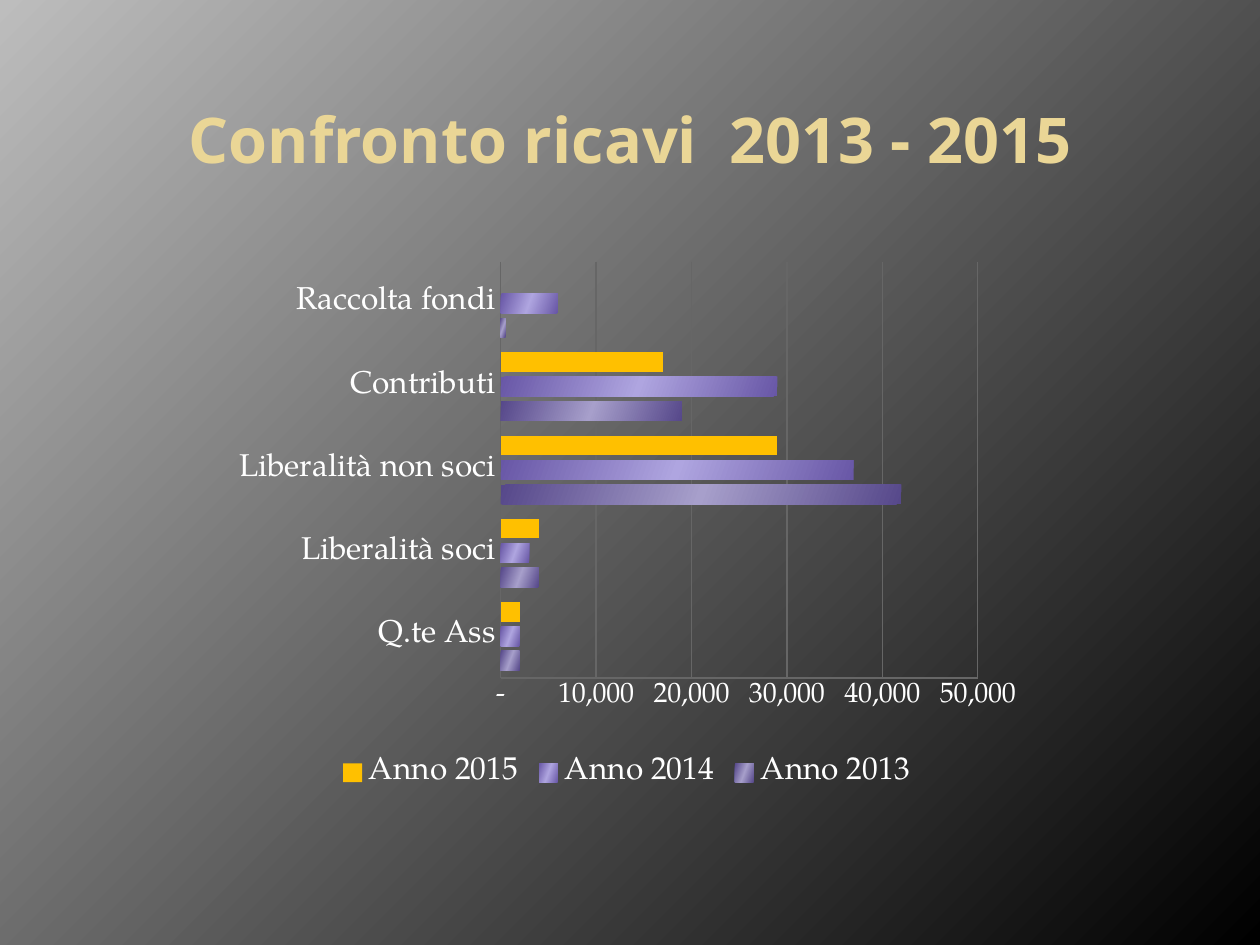
import copy
import pptx
import pptx.chart.data
import pptx.dml.color
import pptx.enum.chart
import pptx.enum.text
import pptx.oxml
import pptx.oxml.ns
import pptx.util

Pt = pptx.util.Pt
qn = pptx.oxml.ns.qn


def tint(code):
    return pptx.dml.color.RGBColor.from_string(code)


def style(font, face, size, color, bold=False):
    font.name, font.size, font.bold = face, Pt(size), bold
    font.color.rgb = tint(color)


def write(frame, text, face, size, color, bold=False):
    frame.word_wrap = True
    frame.vertical_anchor = pptx.enum.text.MSO_ANCHOR.MIDDLE
    para = frame.paragraphs[0]
    para.alignment = pptx.enum.text.PP_ALIGN.CENTER
    run = para.add_run()
    run.text = text
    style(run.font, face, size, color, bold)


def fade(fill, root, codes, angle):
    fill.gradient()
    fill.gradient_angle = angle
    stops = root.find(".//" + qn("a:gsLst"))
    for _ in codes[2:]:
        stops.append(copy.deepcopy(stops[-1]))
    for i, (stop, code) in enumerate(zip(fill.gradient_stops, codes)):
        stop.color.rgb = tint(code)
        stop.position = i / (len(codes) - 1)


class Deck:
    """Hold the style and the current slide."""

    head, body = "Noto Sans", "TeX Gyre Pagella"
    gold, white, gray = "EAD696", "FFFFFF", "666666"

    def __init__(self):
        self.prs = pptx.Presentation()
        self.prs.slide_width, self.prs.slide_height = Pt(720), Pt(540)
        self.slide = self.prs.slides.add_slide(self.prs.slide_layouts[6])

    def back(self, codes, angle):
        fade(self.slide.background.fill, self.slide._element, codes, angle)

    def title(self, text, *box):
        shape = self.slide.shapes.add_textbox(*map(Pt, box))
        write(shape.text_frame, text, self.head, 36, self.gold, bold=True)

    def bars(self, cats, rows, fills, *box):
        data = pptx.chart.data.CategoryChartData()
        data.categories = cats
        for name, vals in rows.items():
            data.add_series(name, vals)
        kind = pptx.enum.chart.XL_CHART_TYPE.BAR_CLUSTERED
        chart = self.slide.shapes.add_chart(kind, *map(Pt, box), data).chart
        chart.has_title = False
        style(chart.font, self.body, 18, self.white)
        plot = chart.plots[0]
        plot.gap_width, plot.overlap, plot.vary_by_categories = 75, -25, False
        for row, codes in zip(plot.series, fills):
            if len(codes) > 1:
                fade(row.format.fill, row._element, codes, 340)
            else:
                row.format.fill.solid()
                row.format.fill.fore_color.rgb = tint(codes[0])
        self.axes(chart)
        chart.has_legend = True
        chart.legend.position = pptx.enum.chart.XL_LEGEND_POSITION.BOTTOM
        chart.legend.include_in_layout = False
        style(chart.legend.font, self.body, 18, self.white)
        self.place(chart, x=0.35, y=0.047, w=0.568, h=0.744)

    def axes(self, chart):
        none = pptx.enum.chart.XL_TICK_MARK.NONE
        for axis, size in (chart.category_axis, 18), (chart.value_axis, 16):
            axis.major_tick_mark = axis.minor_tick_mark = none
            axis.format.line.color.rgb = tint(self.gray)
            style(axis.tick_labels.font, self.body, size, self.white)
        axis = chart.value_axis
        axis.minimum_scale, axis.maximum_scale, axis.major_unit = 0, 50000, 10000
        axis.has_major_gridlines = True
        axis.major_gridlines.format.line.color.rgb = tint(self.gray)
        axis.tick_labels.number_format = r'_(* #,##0_);_(* \(#,##0\);_(* "-"_);_(@_)'
        axis.tick_labels.number_format_is_linked = False

    def place(self, chart, **spots):
        area = chart._chartSpace.find(".//" + qn("c:plotArea"))
        for old in area.findall(qn("c:layout")):
            area.remove(old)
        tags = '<c:layoutTarget val="inner"/><c:xMode val="edge"/><c:yMode val="edge"/>'
        tags += "".join(f'<c:{key} val="{val}"/>' for key, val in spots.items())
        area.insert(0, pptx.oxml.parse_xml(
            f'<c:layout {pptx.oxml.ns.nsdecls("c")}><c:manualLayout>{tags}</c:manualLayout></c:layout>'))


def main():
    deck = Deck()
    deck.back(["BDBDBD", "000000"], 315)
    deck.title("Confronto ricavi  2013 - 2015", 0, 44.6, 720, 68.4)
    cats = ["Q.te Ass", "Liberalità soci", "Liberalità non soci", "Contributi", "Raccolta fondi"]
    rows = {
        "Anno 2013": [2000, 4000, 42000, 19000, 500],
        "Anno 2014": [2000, 3000, 37000, 29000, 6000],
        "Anno 2015": [2000, 4000, 29000, 17000, None],
    }
    fills = [["56488A", "A79FCB", "56488A"], ["6857A6", "AFA5E0", "6857A6"], ["FFC000"]]
    deck.bars(cats, rows, fills, 118, 134.6, 480.2, 319.7)
    deck.prs.save("out.pptx")


if __name__ == "__main__":
    main()
